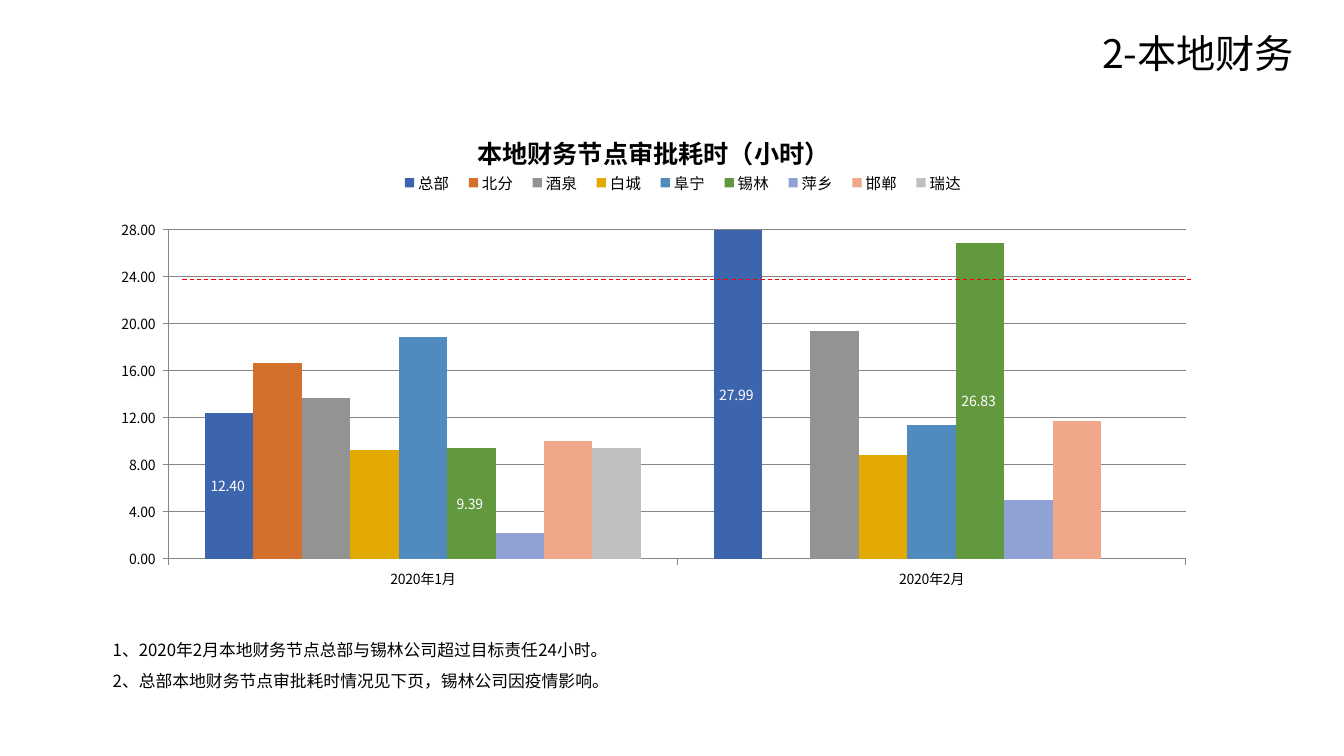
import dataclasses

import lxml.etree
import pptx
import pptx.chart.data
import pptx.dml.color
import pptx.enum.chart
import pptx.enum.dml
import pptx.enum.shapes
import pptx.enum.text
import pptx.oxml.ns
import pptx.util


@dataclasses.dataclass(frozen=True)
class Theme:
    font: str = "Noto Sans CJK SC"
    text: str = "000000"
    label: str = "FFFFFF"
    target: str = "FF0000"
    grid: str = "868686"
    title_size: int = 28
    chart_title_size: int = 18
    note_size: int = 12
    legend_size: int = 11
    axis_size: int = 10


THEME = Theme()
WIDTH, HEIGHT = pptx.util.Inches(13.33), pptx.util.Inches(7.5)

MONTHS = ["2020年1月", "2020年2月"]
# Branch, hours per month, colour, whether values are shown
BRANCHES = [
    ("总部", (12.4, 27.99), "3D65AE", True),
    ("北分", (16.7, None), "D4702B", False),
    ("酒泉", (13.7, 19.4), "939393", False),
    ("白城", (9.3, 8.8), "E2AA00", False),
    ("阜宁", (18.9, 11.4), "508ABE", False),
    ("锡林", (9.39, 26.83), "62993E", True),
    ("萍乡", (2.2, 5), "90A2D4", False),
    ("邯郸", (10, 11.7), "F1A78A", False),
    ("瑞达", (9.4, None), "BFBFBF", False),
]
NOTES = [
    "1、2020年2月本地财务节点总部与锡林公司超过目标责任24小时。",
    "2、总部本地财务节点审批耗时情况见下页，锡林公司因疫情影响。",
]


def across(percent):
    return round(WIDTH * percent / 100)


def down(percent):
    return round(HEIGHT * percent / 100)


def box(left, top, width, height):
    """Turn percentages of the slide into a position and size."""
    return across(left), down(top), across(width), down(height)


def rgb(value):
    return pptx.dml.color.RGBColor.from_string(value)


def format_font(font, size, color=THEME.text, bold=False):
    font.name = THEME.font
    font.size = pptx.util.Pt(size)
    font.bold = bold
    font.color.rgb = rgb(color)


def add_east_asian_font(element):
    """Use the theme font for Chinese text wherever a Latin font is set."""
    for latin in element.xpath(".//a:latin"):
        east_asian = lxml.etree.Element(pptx.oxml.ns.qn("a:ea"))
        east_asian.set("typeface", THEME.font)
        latin.addnext(east_asian)


def write(text_frame, lines, size, color=THEME.text, bold=False, spacing=None):
    for index, line in enumerate(lines):
        paragraph = text_frame.add_paragraph() if index else text_frame.paragraphs[0]
        paragraph.alignment = pptx.enum.text.PP_ALIGN.LEFT
        paragraph.line_spacing = spacing
        run = paragraph.add_run()
        run.text = line
        format_font(run.font, size, color, bold)


def add_title(slide, text):
    title = slide.shapes.title
    title.left, title.top, title.width, title.height = box(81.25, 3.73, 17.48, 7.2)
    title.text_frame.auto_size = pptx.enum.text.MSO_AUTO_SIZE.NONE
    title.text_frame.vertical_anchor = pptx.enum.text.MSO_ANCHOR.MIDDLE
    write(title.text_frame, [text], THEME.title_size, spacing=0.9)
    add_east_asian_font(title.element)


def add_notes_text(slide, lines):
    shape = slide.shapes.add_textbox(*box(7.65, 82.67, 85.82, 13.47))
    shape.text_frame.word_wrap = True
    write(shape.text_frame, lines, THEME.note_size, spacing=1.5)
    add_east_asian_font(shape.element)


def add_target_line(slide):
    level = down(36.93)
    line = slide.shapes.add_connector(
        pptx.enum.shapes.MSO_CONNECTOR.STRAIGHT, across(13.58), level, across(88.67), level)
    line.line.color.rgb = rgb(THEME.target)
    line.line.width = pptx.util.Pt(0.75)
    line.line.dash_style = pptx.enum.dml.MSO_LINE.DASH
    properties = line.element.xpath("./p:spPr")[0]
    lxml.etree.SubElement(properties, pptx.oxml.ns.qn("a:effectLst"))


def set_layout(chart, part, follows=None, inner=False, **shares):
    """Place a chart part by shares of the chart's size."""
    parent = chart.element.xpath(f".//c:{part}")[0]
    for old in parent.xpath("./c:layout"):
        parent.remove(old)
    layout = lxml.etree.Element(pptx.oxml.ns.qn("c:layout"))
    manual = lxml.etree.SubElement(layout, pptx.oxml.ns.qn("c:manualLayout"))
    values = {"layoutTarget": "inner"} if inner else {}
    values.update(xMode="edge", yMode="edge", **shares)
    for name, value in values.items():
        lxml.etree.SubElement(manual, pptx.oxml.ns.qn(f"c:{name}")).set("val", str(value))
    if follows:
        parent.xpath(f"./c:{follows}")[0].addnext(layout)
    else:
        parent.insert(0, layout)


def format_axes(chart):
    values, months = chart.value_axis, chart.category_axis
    values.minimum_scale, values.maximum_scale, values.major_unit = 0, 28, 4
    values.has_major_gridlines = True
    values.tick_labels.number_format = "0.00_ "
    values.tick_labels.number_format_is_linked = False
    for axis in (values, months):
        axis.major_tick_mark = pptx.enum.chart.XL_TICK_MARK.OUTSIDE
        format_font(axis.tick_labels.font, THEME.axis_size)
    for line in (values.format.line, months.format.line, values.major_gridlines.format.line):
        line.color.rgb = rgb(THEME.grid)
        line.width = pptx.util.Pt(0.75)


def format_series(series, color, labelled):
    series.format.fill.solid()
    series.format.fill.fore_color.rgb = rgb(color)
    series.invert_if_negative = False
    if labelled:
        labels = series.data_labels
        labels.show_value = True
        labels.position = pptx.enum.chart.XL_LABEL_POSITION.CENTER
        labels.number_format = "0.00_ "
        labels.number_format_is_linked = False
        format_font(labels.font, THEME.axis_size, THEME.label)


def add_hours_chart(slide):
    data = pptx.chart.data.CategoryChartData()
    data.categories = MONTHS
    for name, hours, _, _ in BRANCHES:
        data.add_series(name, hours)
    chart = slide.shapes.add_chart(
        pptx.enum.chart.XL_CHART_TYPE.COLUMN_CLUSTERED, *box(6.45, 15.47, 87.02, 62.4), data).chart
    format_font(chart.font, THEME.axis_size)
    plot = chart.plots[0]
    plot.gap_width, plot.overlap, plot.vary_by_categories = 150, 0, False
    for series, (_, _, color, labelled) in zip(plot.series, BRANCHES):
        format_series(series, color, labelled)
    format_axes(chart)

    # Title and legend
    chart.has_title = True
    write(chart.chart_title.text_frame, ["本地财务节点审批耗时（小时）"],
          THEME.chart_title_size, bold=True)
    chart.has_legend = True
    chart.legend.position = pptx.enum.chart.XL_LEGEND_POSITION.TOP
    chart.legend.include_in_layout = False
    format_font(chart.legend.font, THEME.legend_size)

    set_layout(chart, "title", follows="tx", x=0.33, y=0.02)
    set_layout(chart, "legend", follows="legendPos", x=0.26, y=0.11, w=0.5, h=0.06)
    set_layout(chart, "plotArea", inner=True, x=0.07, y=0.24, w=0.87, h=0.7)
    add_east_asian_font(chart.element)


def main():
    presentation = pptx.Presentation()
    presentation.slide_width, presentation.slide_height = WIDTH, HEIGHT
    slide = presentation.slides.add_slide(presentation.slide_layouts.get_by_name("Title Only"))
    add_title(slide, "2-本地财务")
    add_notes_text(slide, NOTES)
    add_hours_chart(slide)
    add_target_line(slide)
    presentation.save("out.pptx")


if __name__ == "__main__":
    main()
